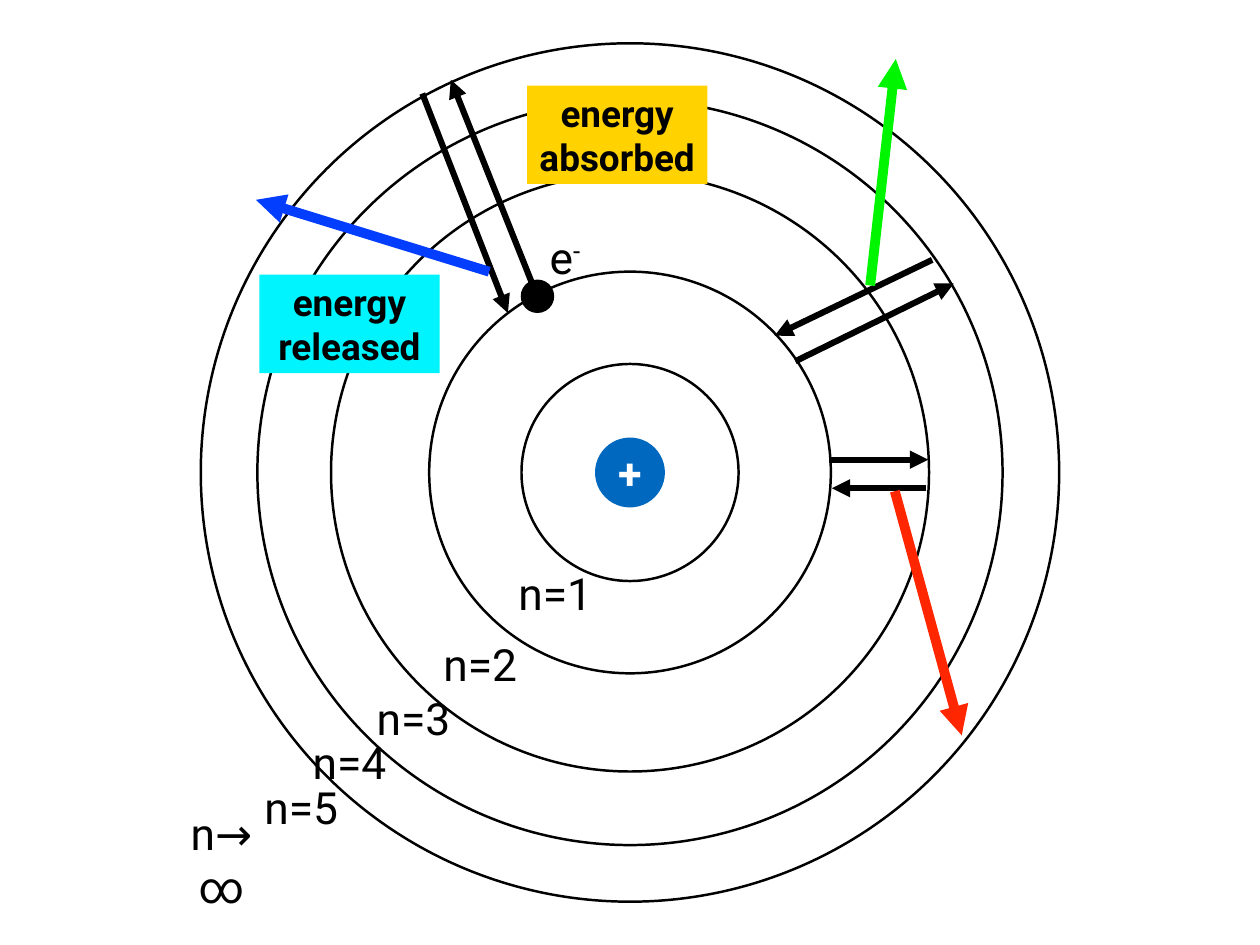
from lxml import etree
from pptx import Presentation
from pptx import util as u
from pptx.dml.color import RGBColor
from pptx.enum import shapes, text
from pptx.oxml.ns import qn

# Grid of square cells, nine to the inch
COLUMNS, ROWS = 128, 96
CELL = u.Inches(1) / 9
CENTRE = (COLUMNS / 2, ROWS / 2)

FONT = "Roboto"
BLACK = RGBColor(0x00, 0x00, 0x00)
WHITE = RGBColor(0xFF, 0xFF, 0xFF)
NUCLEUS_BLUE = RGBColor(0x00, 0x69, 0xBF)
YELLOW = RGBColor(0xFF, 0xD2, 0x00)
CYAN = RGBColor(0x00, 0xF4, 0xFD)
RED = RGBColor(0xFF, 0x26, 0x00)
GREEN = RGBColor(0x00, 0xF6, 0x00)
BLUE = RGBColor(0x03, 0x3D, 0xFD)

ORBIT_DIAMETERS = [22.05, 40.8, 60.75, 75.7, 87.2]
LEVEL_CENTRES = [(56.4, 60.2), (48.8, 67.4), (42, 72.9), (35.5, 77.4), (30.6, 82)]

# Each transition: arrow up, arrow down, emitted light and its colour
TRANSITIONS = [
    (((84.2, 46.7), (94.3, 46.7)), ((94.1, 49.6), (84.5, 49.6)),
     ((90.9, 49.9), (97.7, 74.7)), RED),
    (((80.8, 36.7), (96.9, 28.8)), ((94.7, 26.4), (78.7, 34.1)),
     ((88.4, 29), (91, 6)), GREEN),
    (((54.3, 29.4), (45.8, 8.1)), ((42.9, 9.5), (51.6, 31.8)),
     ((49.7, 27.6), (26, 20.3)), BLUE),
]


def cells(*counts):
    return [u.Emu(round(count * CELL)) for count in counts]


def frame(centre, width, height):
    return cells(centre[0] - width / 2, centre[1] - height / 2, width, height)


def write(shape, wording, size, color, bold=False, wrap=True):
    text_frame = shape.text_frame
    text_frame.word_wrap = wrap
    text_frame.vertical_anchor = text.MSO_ANCHOR.MIDDLE
    text_frame.margin_left = text_frame.margin_right = u.Inches(0.06)
    text_frame.margin_top = text_frame.margin_bottom = u.Inches(0.06)
    text_frame.text = wording
    paragraph = text_frame.paragraphs[0]
    paragraph.alignment = text.PP_ALIGN.CENTER
    style(paragraph.runs[0], size, color, bold)
    return paragraph


def style(run, size, color, bold=False):
    run.font.name = FONT
    run.font.size = u.Pt(size)
    run.font.bold = bold
    run.font.color.rgb = color


def add_filled(slide, kind, centre, width, height, color):
    shape = slide.shapes.add_shape(kind, *frame(centre, width, height))
    shape.shadow.inherit = False
    shape.fill.solid()
    shape.fill.fore_color.rgb = color
    shape.line.fill.background()
    return shape


def add_disc(slide, centre, diameter, color):
    return add_filled(slide, shapes.MSO_SHAPE.OVAL, centre, diameter, diameter, color)


def add_orbit(slide, diameter):
    orbit = slide.shapes.add_shape(
        shapes.MSO_SHAPE.OVAL, *frame(CENTRE, diameter, diameter))
    orbit.shadow.inherit = False
    orbit.fill.background()
    orbit.line.color.rgb = BLACK
    orbit.line.width = u.Pt(2)


def add_label(slide, wording, centre, width=9.1):
    label = slide.shapes.add_textbox(*frame(centre, width, 6.4))
    return write(label, wording, 36, BLACK, wrap=False)


def add_energy_box(slide, wording, centre, color):
    box = add_filled(slide, shapes.MSO_SHAPE.RECTANGLE, centre, 18.3, 10, color)
    write(box, wording, 30, BLACK, bold=True)


def add_arrow(slide, ends, color, width):
    start, end = ends
    arrow = slide.shapes.add_connector(
        shapes.MSO_CONNECTOR.STRAIGHT, *cells(*start, *end))
    arrow.line.color.rgb = color
    arrow.line.width = u.Pt(width)
    etree.SubElement(arrow.line._get_or_add_ln(), qn("a:tailEnd"), type="triangle")
    etree.SubElement(arrow._element.spPr, qn("a:effectLst"))


def main():
    presentation = Presentation()
    presentation.slide_width, presentation.slide_height = cells(COLUMNS, ROWS)
    slide = presentation.slides.add_slide(presentation.slide_layouts[6])

    # Nucleus and orbits
    nucleus = add_disc(slide, CENTRE, 7.1, NUCLEUS_BLUE)
    write(nucleus, "+", 35, WHITE, bold=True)
    for diameter in ORBIT_DIAMETERS:
        add_orbit(slide, diameter)

    # Energy levels
    for level, centre in enumerate(LEVEL_CENTRES, start=1):
        add_label(slide, f"n={level}", centre)
    add_label(slide, "n→∞", (22.5, 87.3), width=11.6)

    # Electron
    add_disc(slide, (54.6, 30.1), 3.4, BLACK)
    electron_label = add_label(slide, "e", (57.4, 26.1), width=4.6)
    charge = electron_label.add_run()
    charge.text = "-"
    style(charge, 36, BLACK)
    charge.font._element.set("baseline", "32000")

    # Energy boxes
    add_energy_box(slide, "energy absorbed", (62.7, 13.7), YELLOW)
    add_energy_box(slide, "energy released", (35.5, 32.9), CYAN)

    # Transitions and emitted light
    for absorption, emission, light, color in TRANSITIONS:
        add_arrow(slide, absorption, BLACK, 5)
        add_arrow(slide, emission, BLACK, 5)
        add_arrow(slide, light, color, 8)

    presentation.save("out.pptx")


if __name__ == "__main__":
    main()
